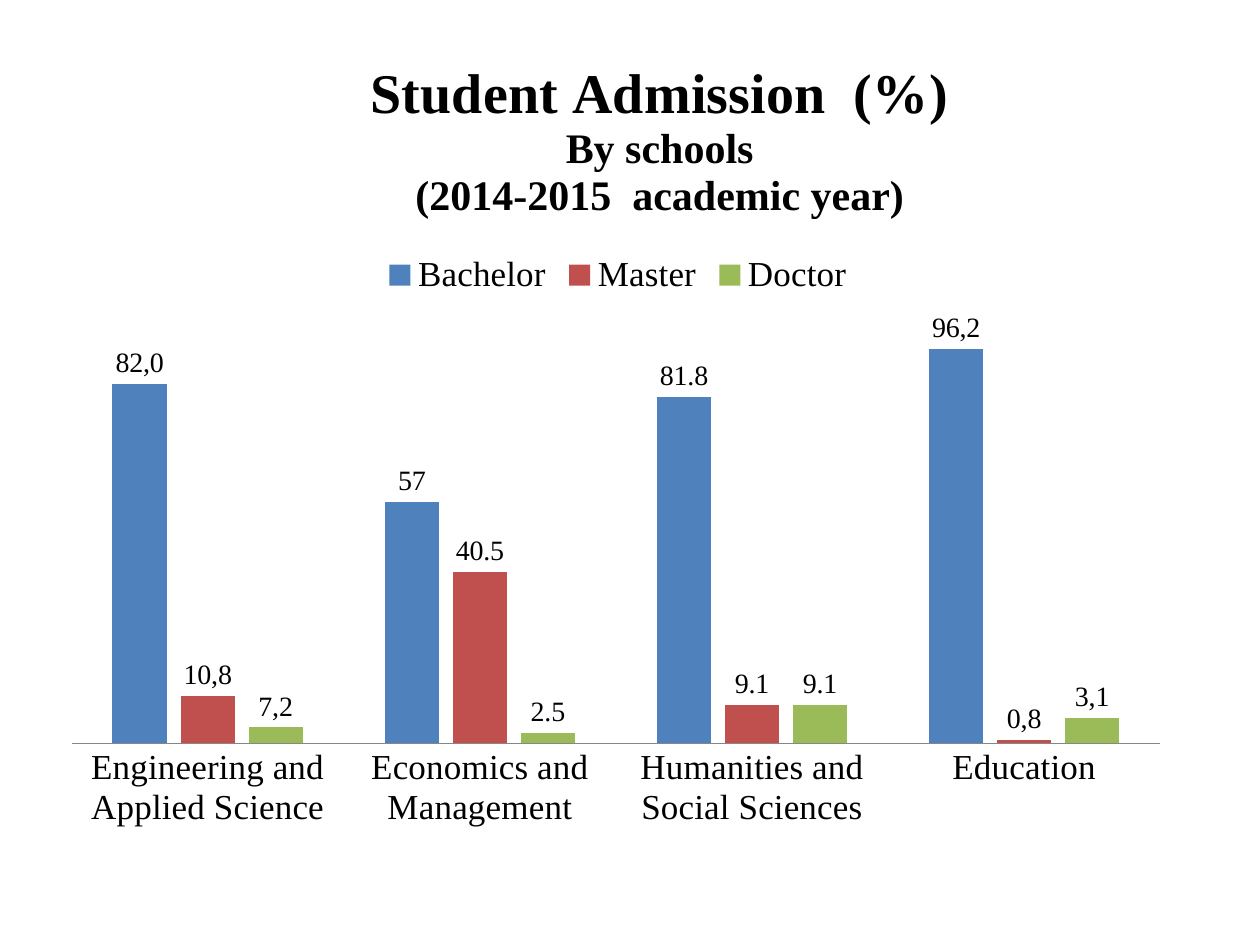
from lxml import etree
from pptx import Presentation
from pptx.chart.data import CategoryChartData
from pptx.dml.color import RGBColor
from pptx.enum.chart import XL_CHART_TYPE, XL_LABEL_POSITION, XL_LEGEND_POSITION, XL_TICK_MARK
from pptx.oxml.ns import qn
from pptx.util import Emu, Pt

CLUSTERED = XL_CHART_TYPE.COLUMN_CLUSTERED
OUTSIDE_END = XL_LABEL_POSITION.OUTSIDE_END
LEGEND_TOP = XL_LEGEND_POSITION.TOP
NO_TICK = XL_TICK_MARK.NONE

EMU_PER_PX = 914400 / 126
FONT = "Times New Roman"
COLORS = {
    "text": "000000",
    "axis": "868686",
    "Bachelor": "4F81BD",
    "Master": "C0504D",
    "Doctor": "9BBB59",
}
SCHOOLS = [
    "Engineering and Applied Science",
    "Economics and Management",
    "Humanities and Social Sciences",
    "Education",
]
ADMISSIONS = {
    "Bachelor": [85, 57, 81.8, 93.3],
    "Master": [11.2, 40.5, 9.1, 0.7],
    "Doctor": [3.7, 2.5, 9.1, 6],
}
POINT_LABELS = {
    "Bachelor": {0: "82,0", 3: "96,2"},
    "Master": {0: "10,8", 3: "0,8"},
    "Doctor": {0: "7,2", 3: "3,1"},
}
TITLE_LINES = [
    ("Student Admission  (%)", 32),
    ("By schools", 24),
    ("(2014-2015  academic year)", 24),
]


def px(n):
    """Turn pixels into EMU."""
    return Emu(round(n * EMU_PER_PX))


def rgb(name):
    """Look up a named colour."""
    return RGBColor.from_string(COLORS[name])


def style_font(font, size, bold=False):
    """Format a font."""
    font.name = FONT
    font.size = Pt(size)
    font.bold = bold
    font.color.rgb = rgb("text")


def write(p, text, size=16, bold=False):
    """Add a formatted run to a paragraph."""
    r = p.add_run()
    r.text = text
    style_font(r.font, size, bold)


def place(element, index, **fractions):
    """Give a chart part a manual layout in fractions of the chart."""
    for old in element.findall(qn("c:layout")):
        element.remove(old)
    layout = etree.Element(qn("c:layout"))
    manual = etree.SubElement(layout, qn("c:manualLayout"))
    if "w" in fractions:
        etree.SubElement(manual, qn("c:layoutTarget"), val="inner")
    for side in ("xMode", "yMode"):
        etree.SubElement(manual, qn(f"c:{side}"), val="edge")
    for key, value in fractions.items():
        etree.SubElement(manual, qn(f"c:{key}"), val=str(value))
    element.insert(index, layout)


def add_title(chart):
    """Write the chart title."""
    chart.has_title = True
    title = chart.chart_title
    title.include_in_layout = False
    tf = title.text_frame
    for i, (text, size) in enumerate(TITLE_LINES):
        p = tf.add_paragraph() if i else tf.paragraphs[0]
        write(p, text, size=size, bold=True)
    place(title._element, 1, x=0.28, y=0.01)


def add_legend(chart):
    """Show the legend under the title."""
    chart.has_legend = True
    legend = chart.legend
    legend.position = LEGEND_TOP
    legend.include_in_layout = False
    style_font(legend.font, 20)
    place(legend._element, 1, x=0.29, y=0.25)


def format_axes(chart):
    """Show the school names and hide the value scale."""
    schools = chart.category_axis
    schools.major_tick_mark = NO_TICK
    schools.format.line.color.rgb = rgb("axis")
    schools.format.line.width = Pt(0.75)
    style_font(schools.tick_labels.font, 20)
    values = chart.value_axis
    values.minimum_scale, values.maximum_scale = 0, 100
    values.has_major_gridlines = False
    values.visible = False


def format_series(series):
    """Colour one degree's columns and label them."""
    series.format.fill.solid()
    series.format.fill.fore_color.rgb = rgb(series.name)
    series.invert_if_negative = False
    labels = series.data_labels
    labels.show_value = True
    labels.position = OUTSIDE_END
    style_font(labels.font, 16)
    for i, text in POINT_LABELS[series.name].items():
        label = series.points[i].data_label
        write(label.text_frame.paragraphs[0], text)
        label.position = OUTSIDE_END


def add_admission_chart(s):
    """Add the column chart of admissions by school."""
    data = CategoryChartData()
    data.categories = SCHOOLS
    for degree, values in ADMISSIONS.items():
        data.add_series(degree, values)
    chart = s.shapes.add_chart(CLUSTERED, px(49), px(49), px(1134), px(798), data).chart
    add_title(chart)
    add_legend(chart)
    format_axes(chart)
    plot = chart.plots[0]
    plot.gap_width, plot.overlap = 150, -25
    plot.vary_by_categories = False
    for series in plot.series:
        format_series(series)
    plot_area = chart._chartSpace.chart.plotArea
    place(plot_area, 0, x=0.02, y=0.34, w=0.96, h=0.53)


def main():
    """Build the slide."""
    prs = Presentation()
    prs.slide_width, prs.slide_height = px(1260), px(945)
    s = prs.slides.add_slide(prs.slide_layouts[6])
    add_admission_chart(s)
    prs.save("out.pptx")


if __name__ == "__main__":
    main()
